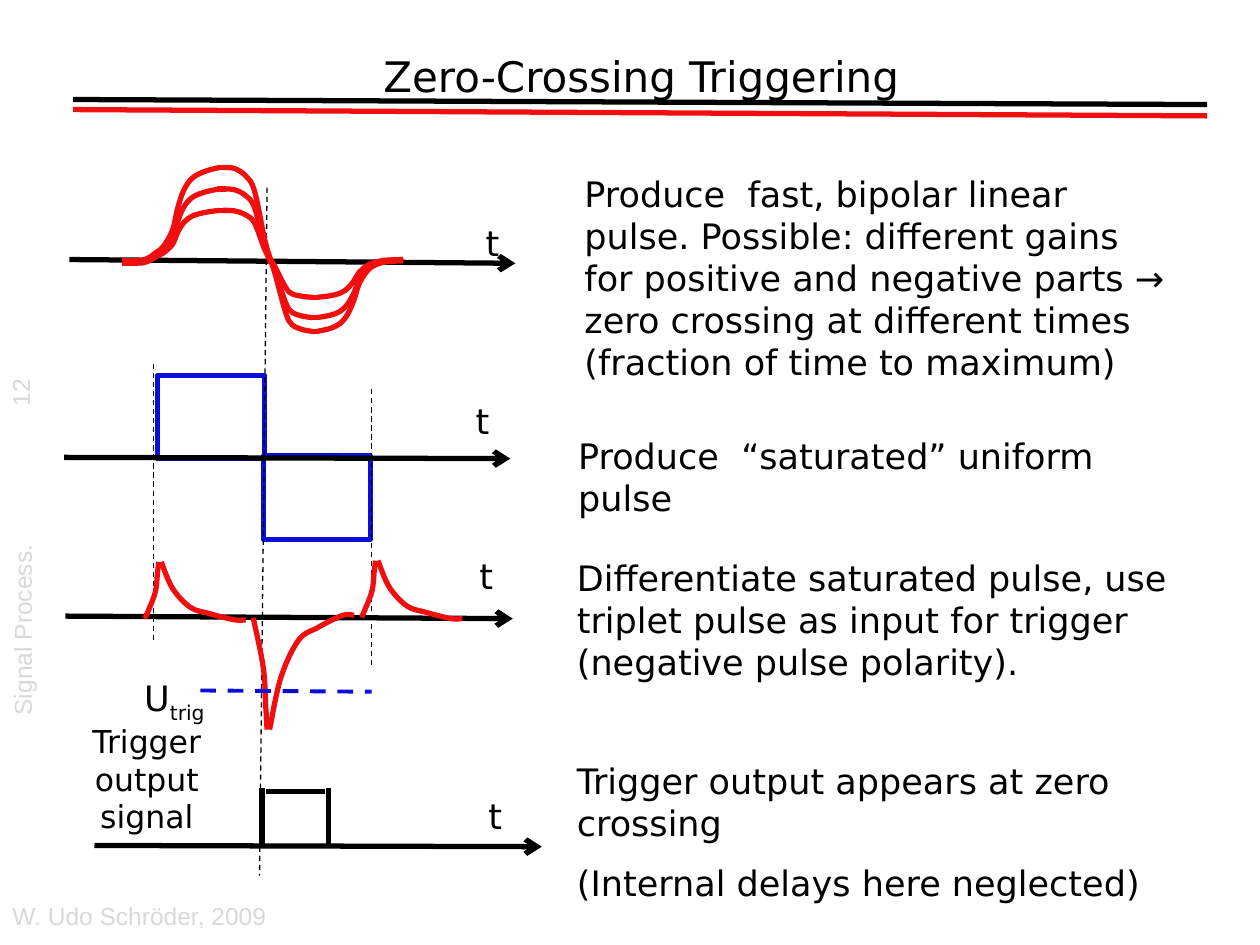
from lxml import etree
from pptx import Presentation
from pptx.dml.color import RGBColor
from pptx.enum.dml import MSO_LINE
from pptx.enum.shapes import MSO_CONNECTOR, MSO_SHAPE
from pptx.enum.text import MSO_ANCHOR, PP_ALIGN
from pptx.oxml.ns import qn
from pptx.util import Inches, Pt

DASH = MSO_LINE.DASH
LINE = MSO_CONNECTOR.STRAIGHT
RECT = MSO_SHAPE.RECTANGLE
TOP, MID = MSO_ANCHOR.TOP, MSO_ANCHOR.MIDDLE
LEFT, MIDDLE = PP_ALIGN.LEFT, PP_ALIGN.CENTER

THEME = {
    "black": "000000", "red": "F00E0E", "blue": "090EDB", "gray": "D9D9D9",
    "font": "DejaVu Sans", "foot": "Arial",
    "title": 24, "body": 20, "label": 18, "small": 14,
    "thick": 3, "trig": 2.25, "thin": 0.75,
}

TITLE = ("Zero-Crossing Triggering", (0.59, 0.28, 9, 0.64))
RULES = [((0.58, 0.79), (9.58, 0.83), "black"), ((0.58, 0.87), (9.58, 0.92), "red")]
FOOTS = [
    ("Signal Process.", (-0.99, 4.8, 2.33, 0.4), {"turn": 270, "align": MIDDLE, "anchor": MID}),
    ("W. Udo Schröder, 2009", (0, 7.1, 3.17, 0.21), {}),
    ("12", (-0.17, 2.88, 0.61, 0.28), {"turn": 270}),
]
NOTES = [
    (["Produce  fast, bipolar linear pulse. Possible: different gains for positive and "
      "negative parts → zero crossing at different times (fraction of time to maximum)"],
     (4.54, 1.32, 4.89, 1.77)),
    (["Produce  “saturated” uniform pulse"], (4.49, 3.4, 5.12, 0.43)),
    (["Differentiate saturated pulse, use triplet pulse as input for trigger "
      "(negative pulse polarity).",
      "Trigger output appears at zero crossing",
      "(Internal delays here neglected)"], (4.48, 4.37, 4.89, 2.93)),
]
GAPS = (0, 44, 10)

AXES = [((0.55, 2.06), (4.09, 2.09)), ((0.51, 3.63), (4.05, 3.64)),
        ((0.52, 4.89), (4.07, 4.91)), ((0.75, 6.71), (4.3, 6.72))]
TIMES = [(3.68, 1.71, 0.46, 0.43), (3.6, 3.12, 0.46, 0.43),
         (3.63, 4.35, 0.46, 0.43), (3.74, 6.26, 0.38, 0.43)]
GUIDES = [((2.12, 1.49), (2.06, 6.95)), ((1.22, 2.89), (1.22, 5.09)),
          ((2.95, 3.09), (2.95, 5.29))]
BOXES = [(1.25, 2.98, 0.85, 0.66), (2.09, 3.62, 0.85, 0.66)]
LEVEL = ((1.59, 5.48), (2.95, 5.49))
GATE = [((2.08, 6.25), (2.08, 6.71)), ((2.61, 6.25), (2.61, 6.71)),
        ((2.58, 6.28), (2.11, 6.28))]

UPPER = [
    [(0.97, 0), (1.14, 0.01), (1.23, 0.08), (1.3, 0.16), (1.37, 0.33), (1.41, 0.56),
     (1.46, 0.76), (1.53, 0.89), (1.63, 0.96), (1.74, 1)],
    [(1.72, 1), (1.79, 1)],
    [(1.77, 1), (1.86, 0.99), (1.95, 0.91), (2.02, 0.75), (2.1, 0.23), (2.15, 0)],
]
LOWER = [
    [(3.2, 0), (3.06, 0.02), (2.97, 0.08), (2.91, 0.17), (2.85, 0.34), (2.81, 0.56),
     (2.76, 0.76), (2.7, 0.89), (2.62, 0.96), (2.52, 1)],
    [(2.53, 1), (2.47, 1)],
    [(2.48, 1), (2.41, 0.98), (2.32, 0.91), (2.27, 0.75), (2.19, 0.24), (2.15, 0)],
]
LOBES = [(UPPER, 2.07, 1.33), (UPPER, 2.09, 1.5), (UPPER, 2.07, 1.67),
         (LOWER, 2.06, 2.63), (LOWER, 2.07, 2.52), (LOWER, 2.06, 2.36)]
SPIKE = [
    [(0, 0), (0.09, 0.21), (0.23, 0.36), (0.38, 0.41), (0.58, 0.46), (0.67, 0.46)],
    [(-0.13, 0.45), (-0.05, 0.25), (-0.03, 0.09), (-0.02, 0)],
]
TIPS = [(1.28, 4.46, 1), (2.14, 5.79, -1.97), (3, 4.45, 1)]

deck = Presentation()
deck.slide_width, deck.slide_height = Inches(10), Inches(7.5)
slide = deck.slides.add_slide(deck.slide_layouts[6])
shapes = slide.shapes


def tint(name):
    return RGBColor.from_string(THEME[name])


def write(paras, spot, size="body", font="font", color="black", align=LEFT,
          anchor=TOP, turn=0, sub=None):
    box = shapes.add_textbox(*map(Inches, spot))
    box.rotation = turn
    frame = box.text_frame
    frame.word_wrap = True
    frame.vertical_anchor = anchor
    for i, (text, gap) in enumerate(zip(paras, GAPS)):
        para = frame.paragraphs[0] if i == 0 else frame.add_paragraph()
        para.alignment = align
        para.space_before = Pt(gap)
        for part in filter(None, (text, sub)):
            run = para.add_run()
            run.text = part
            run.font.name = THEME[font]
            run.font.size = Pt(THEME[size])
            run.font.color.rgb = tint(color)
    if sub:
        run.font._element.set("baseline", "-25000")


def ink(line, color, width):
    line.color.rgb = tint(color)
    line.width = Pt(THEME[width])


def draw(start, end, color="black", width="thick", dash=None, arrow=False):
    link = shapes.add_connector(LINE, *map(Inches, (*start, *end)))
    ink(link.line, color, width)
    if dash:
        link.line.dash_style = dash
    if arrow:
        etree.SubElement(link.line._get_or_add_ln(), qn("a:tailEnd"), type="arrow")
    etree.SubElement(link._element.spPr, qn("a:effectLst"))


def bend(form):
    dots = list(form._element.iter(qn("a:pt")))
    spots = [(int(dot.get("x")), int(dot.get("y"))) for dot in dots]
    ends = [spots[0], *spots, spots[-1]]
    for i, leg in enumerate(list(form._element.iter(qn("a:lnTo")))):
        a, b, c, d = ends[i:i + 4]
        leg.tag = qn("a:cubicBezTo")
        pulls = [[p + (r - q) // 6 for p, q, r in zip(*trio)]
                 for trio in ((b, a, c), (c, d, b))]
        for n, (x, y) in enumerate(pulls):
            leg.insert(n, etree.Element(qn("a:pt"), x=str(x), y=str(y)))


def curve(knots):
    dots = [tuple(map(Inches, knot)) for knot in knots]
    pen = shapes.build_freeform(*dots[0], scale=1.0)
    pen.add_line_segments(dots[1:], close=False)
    form = pen.convert_to_shape()
    bend(form)
    form.fill.background()
    form.shadow.inherit = False
    ink(form.line, "red", "thick")


for start, end, color in RULES:
    draw(start, end, color)
for text, spot, style in FOOTS:
    write([text], spot, size="small", font="foot", color="gray", **style)
write([TITLE[0]], TITLE[1], size="title", align=MIDDLE, anchor=MID)

for spot in BOXES:
    box = shapes.add_shape(RECT, *map(Inches, spot))
    box.fill.background()
    box.shadow.inherit = False
    ink(box.line, "blue", "thick")
for paras, spot in NOTES:
    write(paras, spot)
for start, end in GUIDES:
    draw(start, end, width="thin", dash=DASH)
for start, end in AXES:
    draw(start, end, arrow=True)
for lobe, base, peak in LOBES:
    for part in lobe:
        curve([(x, base + h * (peak - base)) for x, h in part])
for x, y, grow in TIPS:
    for part in SPIKE:
        curve([(x + dx, y + dy * grow) for dx, dy in part])
draw(*LEVEL, color="blue", width="trig", dash=DASH)
for start, end in GATE:
    draw(start, end)
for spot in TIMES:
    write(["t"], spot, align=MIDDLE)
write(["U"], (1, 5.32, 0.77, 0.43), align=MIDDLE, sub="trig")
write(["Trigger output signal"], (0.61, 5.68, 1.11, 1), size="label", align=MIDDLE)

deck.save("out.pptx")
